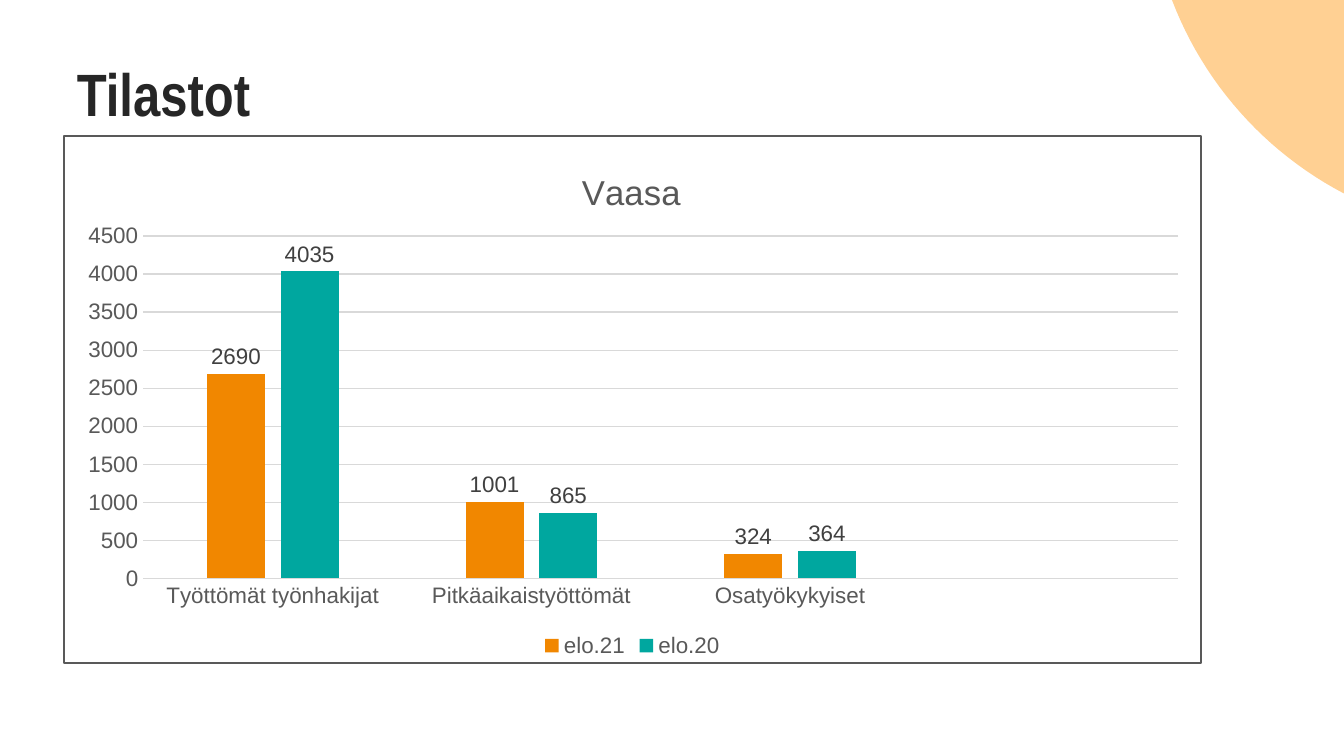
from math import cos, radians, sin

from pptx import Presentation
from pptx.chart.data import CategoryChartData
from pptx.dml.color import RGBColor
from pptx.enum.chart import XL_CHART_TYPE, XL_LABEL_POSITION, XL_LEGEND_POSITION, XL_TICK_MARK
from pptx.enum.text import MSO_ANCHOR
from pptx.oxml import parse_xml
from pptx.oxml.ns import nsdecls, qn
from pptx.util import Inches, Pt

PEACH = RGBColor(0xFF, 0xD0, 0x93)
ORANGE = RGBColor(0xF1, 0x87, 0x00)
TEAL = RGBColor(0x00, 0xA7, 0x9F)
INK = RGBColor(0x26, 0x26, 0x26)
DARK = RGBColor(0x40, 0x40, 0x40)
GRAY = RGBColor(0x59, 0x59, 0x59)
PALE = RGBColor(0xD9, 0xD9, 0xD9)


class Deck:
    """Style and current slide, measured in cells of a grid 100 columns wide."""

    def __init__(self):
        self.show = Presentation()
        self.show.slide_width = Inches(10)
        self.show.slide_height = Inches(10) * 9 // 16
        self.cell = self.show.slide_width / 100
        self.slide = self.show.slides.add_slide(self.show.slide_layouts[6])

    def grid(self, *cells):
        return [round(n * self.cell) for n in cells]

    def style(self, font, size, color, name="Arial", bold=False):
        form = {"size": Pt(size), "name": name, "bold": bold}
        for key, value in form.items():
            setattr(font, key, value)
        font.color.rgb = color

    def corner(self, x, y, radius, start, end, color, steps=24):
        turns = [radians(start + (end - start) * i / steps) for i in range(steps + 1)]
        arc = [self.grid(x + radius * cos(t), y + radius * sin(t)) for t in turns]
        build = self.slide.shapes.build_freeform(*self.grid(100, 0), scale=1.0)
        build.add_line_segments(arc, close=True)
        shape = build.convert_to_shape()
        shape.shadow.inherit = False
        shape.fill.solid()
        shape.fill.fore_color.rgb = color
        shape.line.fill.background()

    def title(self, text, box):
        frame = self.slide.shapes.add_textbox(*self.grid(*box)).text_frame
        form = {"word_wrap": True, "vertical_anchor": MSO_ANCHOR.BOTTOM, "text": text}
        for key, value in form.items():
            setattr(frame, key, value)
        self.style(frame.paragraphs[0].font, 32, INK, "Arial Narrow", True)

    def axis(self, axis):
        form = {"major_tick_mark": XL_TICK_MARK.NONE, "minor_tick_mark": XL_TICK_MARK.NONE}
        for key, value in form.items():
            setattr(axis, key, value)
        self.style(axis.tick_labels.font, 12, GRAY)

    def line(self, form):
        form.line.color.rgb = PALE
        form.line.width = Pt(0.75)

    def place(self, part, index, area, target=""):
        for old in part.findall(qn("c:layout")):
            part.remove(old)
        marks = "".join(f'<c:{key} val="{value}"/>' for key, value in area.items())
        part.insert(index, parse_xml(
            f'<c:layout {nsdecls("c")}><c:manualLayout>{target}<c:xMode val="edge"/>'
            f'<c:yMode val="edge"/>{marks}</c:manualLayout></c:layout>'))

    def frame(self, chart, area, spot):
        root = chart.element.find(qn("c:chart"))
        root.addnext(parse_xml(
            f'<c:spPr {nsdecls("c", "a")}><a:noFill/><a:ln w="{Pt(0.75)}"><a:solidFill>'
            f'<a:srgbClr val="{GRAY}"/></a:solidFill></a:ln></c:spPr>'))
        self.place(root.find(qn("c:plotArea")), 0, area, '<c:layoutTarget val="inner"/>')
        self.place(root.find(qn("c:title")), 1, spot)
        for point in list(root.iter(qn("c:pt"))):
            if not point.findtext(qn("c:v")):
                point.getparent().remove(point)

    def chart(self, text, names, rows, box, area, spot):
        data = CategoryChartData()
        data.categories = names
        for name, (values, _) in rows.items():
            data.add_series(name, values)
        kind = XL_CHART_TYPE.COLUMN_CLUSTERED
        chart = self.slide.shapes.add_chart(kind, *self.grid(*box), data).chart
        self.style(chart.font, 12, GRAY)
        chart.has_title = chart.has_legend = True
        head = chart.chart_title.text_frame
        head.text = text
        self.style(head.paragraphs[0].runs[0].font, 18.6, GRAY)
        legend = chart.legend
        legend.position = XL_LEGEND_POSITION.BOTTOM
        legend.include_in_layout = False
        self.style(legend.font, 12, GRAY)
        self.axis(chart.category_axis)
        self.axis(chart.value_axis)
        self.line(chart.category_axis.format)
        self.line(chart.value_axis.major_gridlines.format)
        chart.value_axis.format.line.fill.background()
        scale = {"minimum_scale": 0, "maximum_scale": 4500, "major_unit": 500}
        for key, value in scale.items():
            setattr(chart.value_axis, key, value)
        plot = chart.plots[0]
        form = {"gap_width": 219, "overlap": -27, "vary_by_categories": False}
        for key, value in form.items():
            setattr(plot, key, value)
        for series, (_, color) in zip(plot.series, rows.values()):
            series.format.fill.solid()
            series.format.fill.fore_color.rgb = color
            labels = series.data_labels
            labels.show_value = True
            labels.position = XL_LABEL_POSITION.OUTSIDE_END
            self.style(labels.font, 12, DARK)
        self.frame(chart, area, spot)


def main():
    deck = Deck()
    deck.corner(112.64, -9.72, 27.23, 159.1, 117.65, PEACH)
    deck.title("Tilastot", (4.73, 2.55, 84.65, 7.5))
    names = ["Työttömät työnhakijat", "Pitkäaikaistyöttömät", "Osatyökykyiset", ""]
    rows = {
        "elo.21": ([2690, 1001, 324, None], ORANGE),
        "elo.20": ([4035, 865, 364, None], TEAL),
    }
    area = {"x": 0.07, "y": 0.19, "w": 0.91, "h": 0.65}
    spot = {"x": 0.45, "y": 0.05}
    deck.chart("Vaasa", names, rows, (4.7, 10.08, 84.7, 39.3), area, spot)
    deck.show.save("out.pptx")


if __name__ == "__main__":
    main()
